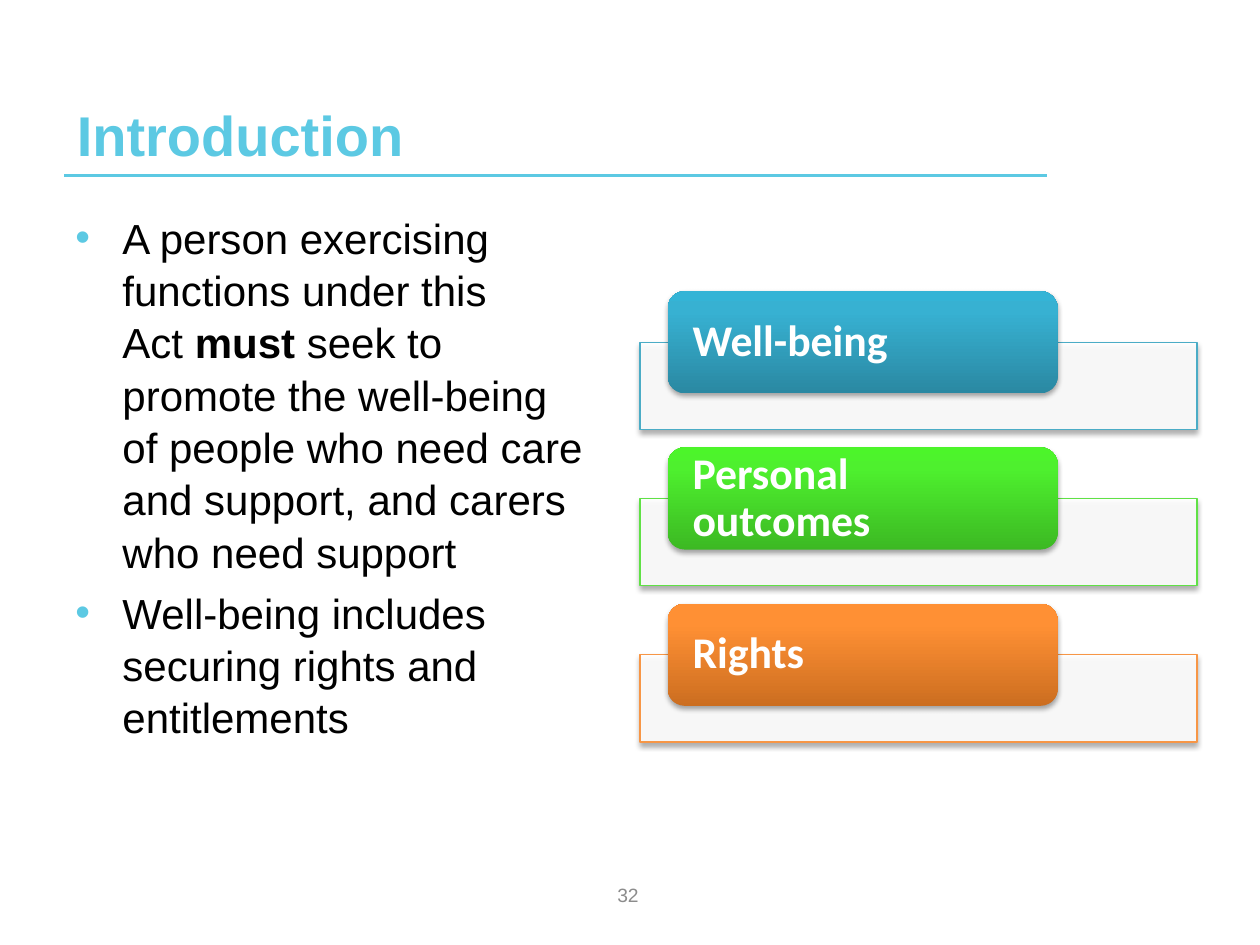
import pptx
import pptx.dml.color
import pptx.enum.shapes
import pptx.enum.text
import pptx.oxml
import pptx.oxml.ns
import pptx.util
from lxml import etree

Cm = pptx.util.Cm
Pt = pptx.util.Pt
SHAPE = pptx.enum.shapes.MSO_SHAPE
ANCHOR = pptx.enum.text.MSO_ANCHOR
ALIGN = pptx.enum.text.PP_ALIGN
qn = pptx.oxml.ns.qn
AQUA = "5CC9E3"


def tint(text):
    return pptx.dml.color.RGBColor.from_string(text)


def node(root, tag, **attrs):
    return etree.SubElement(root, qn(tag), attrs)


def put(para, text, size, color, bold=False, face="Arial"):
    run = para.add_run()
    run.text = text
    run.font.size = Pt(size)
    run.font.name = face
    run.font.bold = bold
    run.font.color.rgb = tint(color)


def field(slide, box, anchor):
    frame = slide.shapes.add_textbox(*map(Cm, box)).text_frame
    frame.word_wrap = True
    frame.vertical_anchor = anchor
    return frame


def shade(shape):
    shape.shadow.inherit = False
    root = shape._element.spPr.find(qn("a:effectLst"))
    drop = node(root, "a:outerShdw", blurRad=str(Pt(3.1)), dist=str(Pt(1.8)),
                dir="5400000", rotWithShape="0")
    node(node(drop, "a:srgbClr", val="000000"), "a:alpha", val="35000")


def blend(shape, colors):
    shape.fill.gradient()
    shape.fill.gradient_angle = 90
    stops = shape._element.spPr.find(qn("a:gradFill")).find(qn("a:gsLst"))
    for stop in list(stops):
        stops.remove(stop)
    for place, color in zip((0, 80, 100), colors):
        stop = node(stops, "a:gs", pos=str(place * 1000))
        node(stop, "a:srgbClr", val=color)


def header(slide, box):
    left, top, width, height = box
    base = Cm(top + height + 0.03)
    rule = slide.shapes.add_connector(
        pptx.enum.shapes.MSO_CONNECTOR.STRAIGHT,
        Cm(left), base, Cm(left + width), base)
    rule.line.color.rgb = tint(AQUA)
    rule.line.width = Pt(2)
    node(rule._element.spPr, "a:effectLst")
    frame = field(slide, box, ANCHOR.BOTTOM)
    put(frame.paragraphs[0], "Introduction", 32, AQUA, True)


def bullets(slide, box, items):
    frame = field(slide, box, ANCHOR.TOP)
    for rank, lines in enumerate(items):
        para = frame.add_paragraph() if rank else frame.paragraphs[0]
        props = para._p.get_or_add_pPr()
        props.set("marL", str(Cm(0.95)))
        props.set("indent", str(Cm(-0.95)))
        node(node(props, "a:buClr"), "a:srgbClr", val=AQUA)
        node(props, "a:buFont", typeface="Arial")
        node(props, "a:buChar", char="•")
        para.line_spacing = 1.04
        if rank:
            para.space_before = Pt(4.8)
        for index, runs in enumerate(lines):
            if index:
                para.add_line_break()
            for text, bold in runs:
                put(para, text, 24, "000000", bold)


def card(slide, box, label, edge, colors):
    left, top, width, height = box
    tray = slide.shapes.add_shape(
        SHAPE.RECTANGLE, Cm(left), Cm(top + 1.03), Cm(width), Cm(height - 1.03))
    tray.fill.solid()
    tray.fill.fore_color.rgb = tint("FFFFFF")
    fill = tray._element.spPr.find(qn("a:solidFill"))
    node(fill[0], "a:alpha", val="90000")
    tray.line.color.rgb = tint(edge)
    tray.line.width = Pt(0.75)
    shade(tray)
    tab = slide.shapes.add_shape(
        SHAPE.ROUNDED_RECTANGLE, Cm(left + 0.56), Cm(top),
        Cm(width * 0.7), Cm(2.06))
    blend(tab, colors)
    tab.line.fill.background()
    shade(tab)
    frame = tab.text_frame
    frame.word_wrap = True
    frame.vertical_anchor = ANCHOR.MIDDLE
    frame.margin_left = frame.margin_right = Cm(0.4)
    frame.margin_top = frame.margin_bottom = 0
    para = frame.paragraphs[0]
    para.alignment = ALIGN.LEFT
    para.line_spacing = 0.9
    put(para, label, 25, "FFFFFF", True, "Calibri")


def cards(slide, box, items):
    left, top, width, height = box
    tall = 2.79
    step = (height - tall) / (len(items) - 1)
    for rank, item in enumerate(items):
        card(slide, (left, top + rank * step, width, tall), *item)


def footer(slide, box):
    para = field(slide, box, ANCHOR.MIDDLE).paragraphs[0]
    para.alignment = ALIGN.CENTER
    put(para, "32", 11, "8C8C8C")


def main():
    deck = pptx.Presentation()
    deck.slide_width = Cm(25.4)
    deck.slide_height = Cm(19.05)
    slide = deck.slides.add_slide(deck.slide_layouts[6])
    header(slide, (1.3, 0.74, 19.81, 2.77))
    bullets(slide, (1.27, 4.11, 11.23, 11.58), [
        [[("A person exercising functions under this ", False)],
         [("Act ", False), ("must", True),
          (" seek to promote the well-being ", False)],
         [("of people who need care and support, "
           "and carers who need support", False)]],
        [[("Well-being includes securing rights and entitlements", False)]],
    ])
    cards(slide, (12.9, 5.87, 11.23, 9.09), [
        ("Well-being", "4BACC6", ("2A88A2", "37B1D2", "34B4D6")),
        ("Personal outcomes", "60E146", ("3CB923", "4EF02E", "4CF52A")),
        ("Rights", "F79646", ("CC6E20", "FF9034", "FF9136")),
    ])
    footer(slide, (9.7, 17.53, 5.92, 1.02))
    deck.save("out.pptx")


if __name__ == "__main__":
    main()
